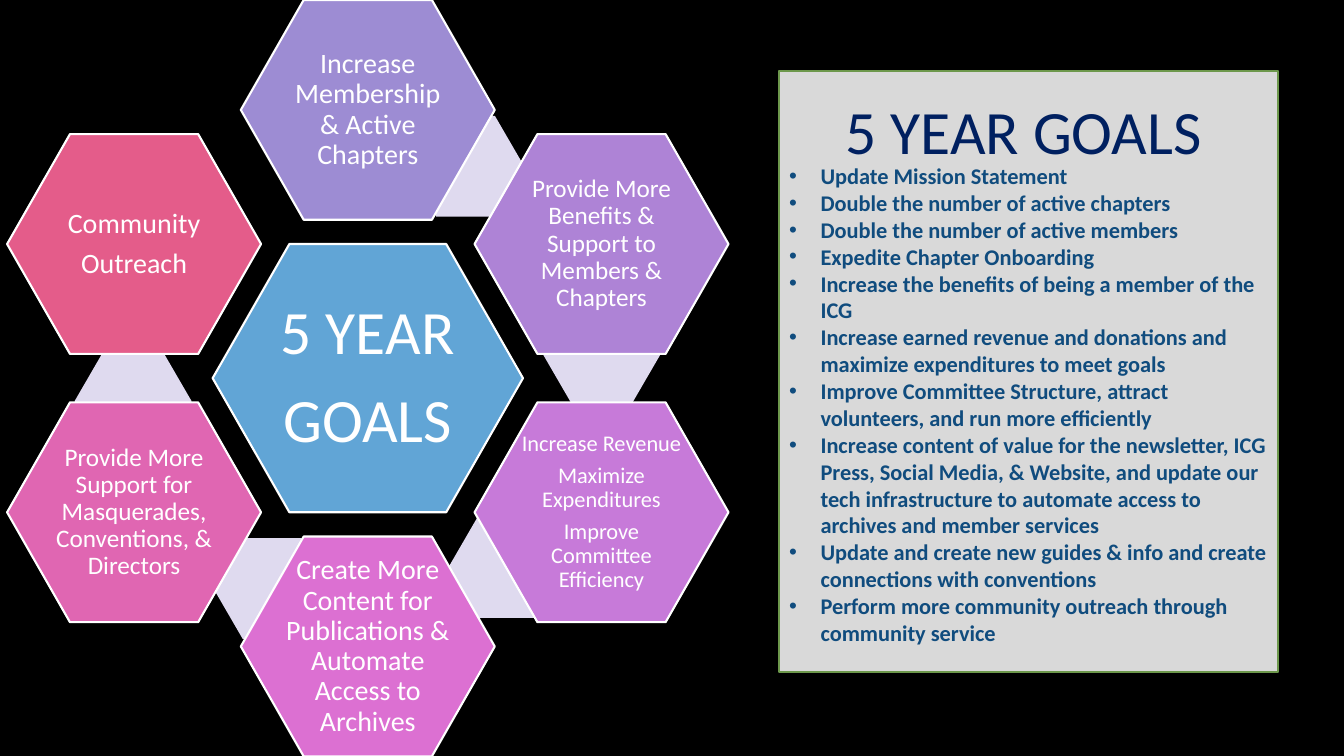
from dataclasses import dataclass

from lxml import etree
from pptx import Presentation
from pptx.dml.color import RGBColor
from pptx.enum.shapes import MSO_SHAPE
from pptx.enum.text import MSO_ANCHOR, PP_ALIGN
from pptx.oxml.ns import qn
from pptx.util import Cm, Pt

HEXAGON = MSO_SHAPE.HEXAGON
RECTANGLE = MSO_SHAPE.RECTANGLE
MIDDLE = MSO_ANCHOR.MIDDLE
TOP = MSO_ANCHOR.TOP
CENTER = PP_ALIGN.CENTER
LEFT = PP_ALIGN.LEFT


@dataclass(frozen=True)
class Theme:
    font: str = "Calibri"
    background: str = "000000"
    white: str = "FFFFFF"
    link: str = "DFDAEF"
    hub: str = "61A5D6"
    panel: str = "D9D9D9"
    panel_line: str = "6D984C"
    title: str = "002060"
    bullet: str = "104C7E"
    ring: tuple = ("9D8CD3", "AE83D6", "C77AD9", "DC70D2", "E066B2", "E45C8A")
    title_size: int = 44
    large_size: int = 20
    medium_size: int = 18
    small_size: int = 16
    line_width: float = 1.5


theme = Theme()


def add_filled_shape(kind, left, top, width, height, fill, line=None):
    shape = slide.shapes.add_shape(kind, Cm(left), Cm(top), Cm(width), Cm(height))
    shape.shadow.inherit = False
    shape.fill.solid()
    shape.fill.fore_color.rgb = RGBColor.from_string(fill)
    if line:
        shape.line.color.rgb = RGBColor.from_string(line)
        shape.line.width = Pt(theme.line_width)
    else:
        shape.line.fill.background()
    return shape


def style_paragraph(paragraph, size, color, alignment, bold=False):
    paragraph.alignment = alignment
    for run in paragraph.runs:
        run.font.name = theme.font
        run.font.size = Pt(size)
        run.font.bold = bold
        run.font.color.rgb = RGBColor.from_string(color)


presentation = Presentation()
presentation.slide_width = Cm(33.87)
presentation.slide_height = Cm(19.05)
slide = presentation.slides.add_slide(presentation.slide_layouts[6])
slide.background.fill.solid()
slide.background.fill.fore_color.rgb = RGBColor.from_string(theme.background)

link_positions = [(10.26, 2.92), (13.69, 7.67), (11.3, 13.03), (5.38, 13.56), (1.88, 8.84)]
for left, top in link_positions:
    link = add_filled_shape(HEXAGON, left, top, 2.95, 2.54, theme.link)
    link.adjustments[0] = 0.29

center_x, center_y = 9.27, 9.53
column_step, row_step = 5.89, 3.38
hub_size = (7.82, 6.76)
goal_size = (6.4, 5.54)

ring_steps = [(0, -2), (1, -1), (1, 1), (0, 2), (-1, 1), (-1, -1)]
ring_goals = [
    ("Increase Membership & Active Chapters", theme.large_size),
    ("Provide More Benefits & Support to Members & Chapters", theme.medium_size),
    ("Increase Revenue\nMaximize Expenditures\nImprove Committee Efficiency", theme.small_size),
    ("Create More Content for Publications & Automate Access to Archives", theme.large_size),
    ("Provide More Support for Masquerades, Conventions, & Directors", theme.medium_size),
    ("Community\nOutreach", theme.large_size),
]
hexagons = [("5 YEAR\nGOALS", theme.title_size, theme.hub, (0, 0), hub_size)]
for (text, size), fill, step in zip(ring_goals, theme.ring, ring_steps):
    hexagons.append((text, size, fill, step, goal_size))

for text, size, fill, (column, row), (width, height) in hexagons:
    left = center_x + column * column_step - width / 2
    top = center_y + row * row_step - height / 2
    hexagon = add_filled_shape(HEXAGON, left, top, width, height, fill, theme.white)
    hexagon.adjustments[0] = 0.286
    text_frame = hexagon.text_frame
    text_frame.text = text
    text_frame.word_wrap = True
    text_frame.vertical_anchor = MIDDLE
    inset = Cm(size * 0.0035)
    text_frame.margin_left = text_frame.margin_right = inset
    text_frame.margin_top = text_frame.margin_bottom = inset
    for paragraph in text_frame.paragraphs:
        style_paragraph(paragraph, size, theme.white, CENTER)
        paragraph.line_spacing = 0.9
        paragraph.space_after = Pt(round(size * 0.35, 1))

goals = [
    "Update Mission Statement",
    "Double the number of active chapters",
    "Double the number of active members",
    "Expedite Chapter Onboarding",
    "Increase the benefits of being a member of the ICG",
    "Increase earned revenue and donations and maximize expenditures to meet goals",
    "Improve Committee Structure, attract volunteers, and run more efficiently",
    "Increase content of value for the newsletter, ICG Press, Social Media, & Website, "
    "and update our tech infrastructure to automate access to archives and member services",
    "Update and create new guides & info and create connections with conventions",
    "Perform more community outreach through community service",
]
panel = add_filled_shape(RECTANGLE, 19.64, 1.78, 12.58, 15.16, theme.panel, theme.panel_line)
text_frame = panel.text_frame
text_frame.text = "\n".join(goals)
text_frame.word_wrap = True
text_frame.vertical_anchor = TOP
text_frame.margin_top = Cm(2.31)
for paragraph in text_frame.paragraphs:
    properties = paragraph._p.get_or_add_pPr()
    properties.set("marL", str(Cm(0.79)))
    properties.set("indent", str(-Cm(0.79)))
    etree.SubElement(properties, qn("a:buFont")).set("typeface", "Arial")
    etree.SubElement(properties, qn("a:buChar")).set("char", "•")
    style_paragraph(paragraph, theme.small_size, theme.bullet, LEFT, bold=True)

title = slide.shapes.add_textbox(Cm(21.06), Cm(2.2), Cm(10.8), Cm(2.16))
title.text_frame.text = "5 YEAR GOALS"
title.text_frame.word_wrap = True
title.text_frame.vertical_anchor = MIDDLE
style_paragraph(title.text_frame.paragraphs[0], theme.title_size, theme.title, LEFT)

presentation.save("out.pptx")
